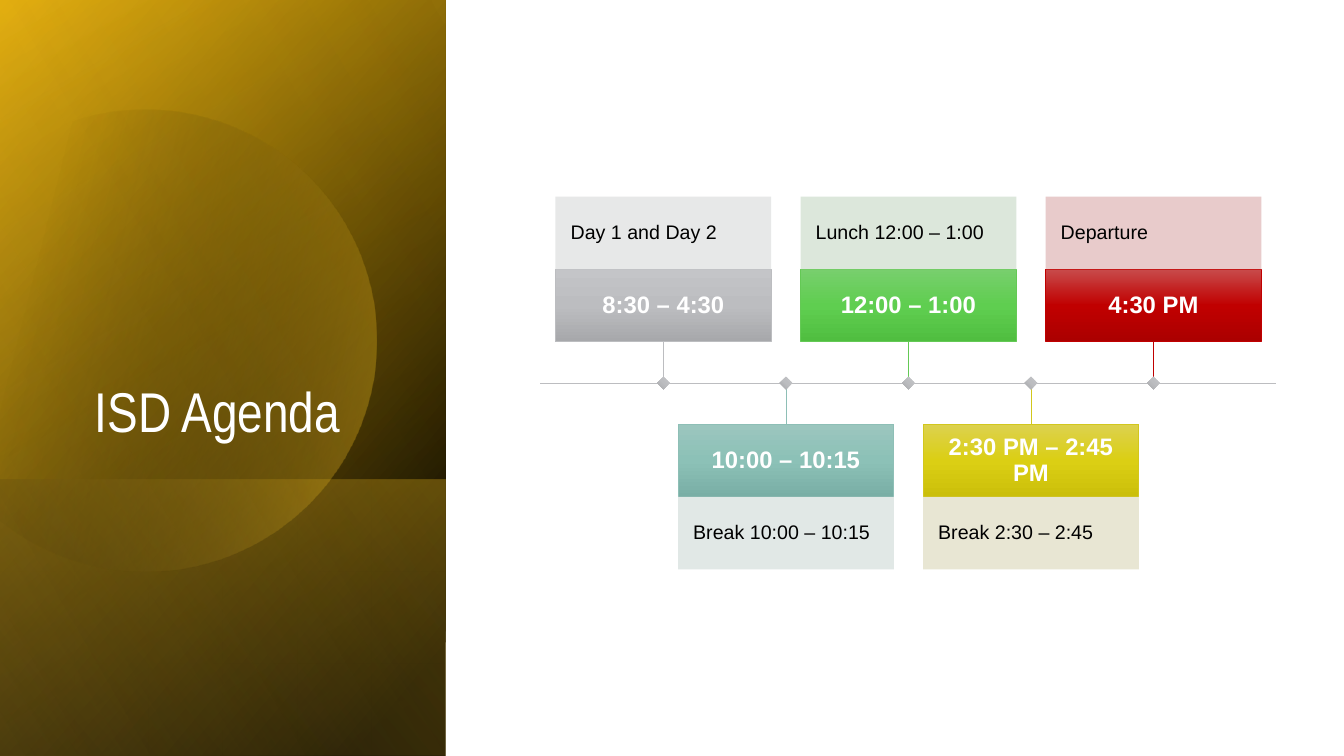
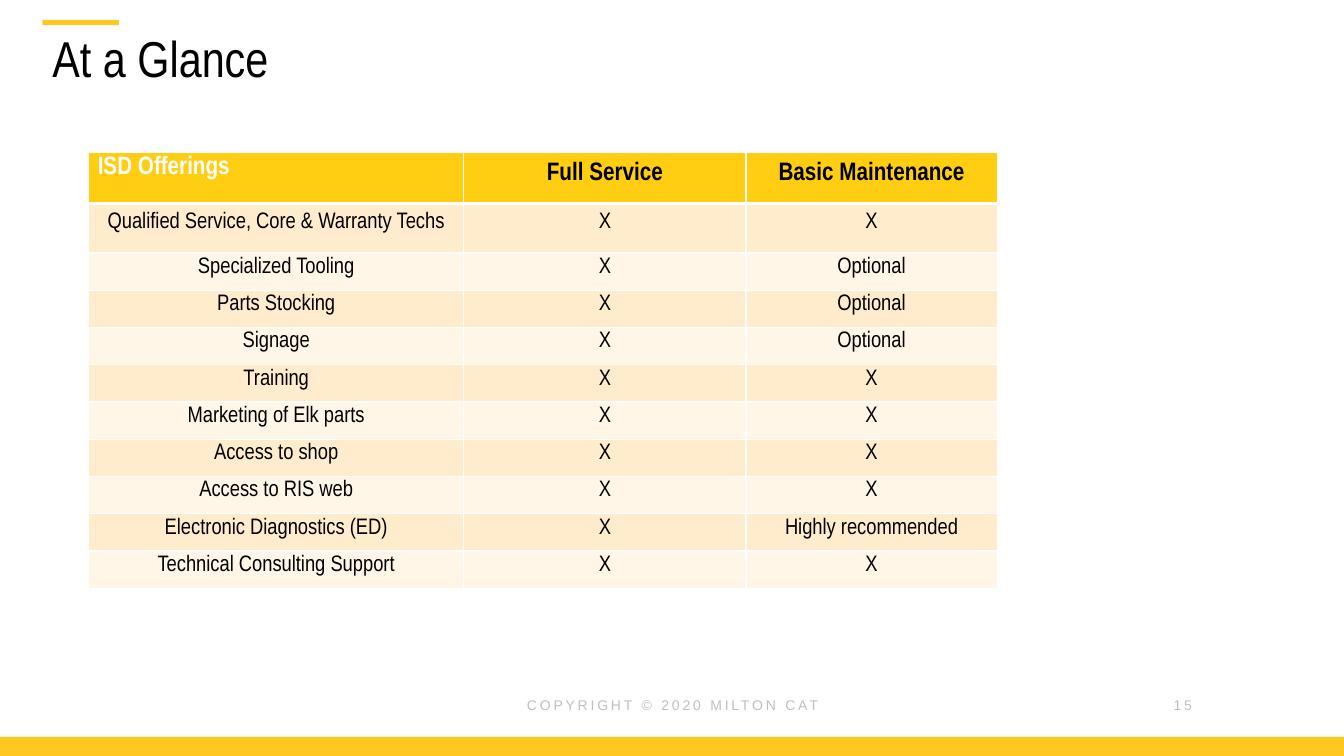
from dataclasses import dataclass
from math import acos, cos, sin

from lxml.etree import SubElement
from pptx import Presentation
from pptx.dml.color import RGBColor
from pptx.enum.shapes import MSO_CONNECTOR as Connector, MSO_SHAPE as Preset
from pptx.enum.text import MSO_ANCHOR as Anchor, MSO_AUTO_SIZE as AutoSize, PP_ALIGN as Align
from pptx.oxml import parse_xml
from pptx.oxml.ns import nsdecls, qn
from pptx.shapes.autoshape import Shape
from pptx.slide import Slide
from pptx.table import _Cell as Cell
from pptx.text.text import TextFrame
from pptx.util import Inches, Pt

WHITE = RGBColor(0xFF, 0xFF, 0xFF)
BLACK = RGBColor(0x00, 0x00, 0x00)
YELLOW = RGBColor(0xFE, 0xC8, 0x20)
AMBER = RGBColor(0xFF, 0xC7, 0x1F)
PALE_AMBER = RGBColor(0xFF, 0xDD, 0x79)
DARK_GOLD = RGBColor(0xD6, 0xA1, 0x00)
FOOTER_GRAY = RGBColor(0xBF, 0xBF, 0xBF)
AXIS_GRAY = RGBColor(0xBC, 0xBD, 0xC0)
HEADER_FILL = RGBColor(0xFF, 0xCD, 0x11)
ROW_FILLS = (RGBColor(0xFF, 0xEC, 0xCC), RGBColor(0xFF, 0xF6, 0xE7))

SLIDE_WIDTH, SLIDE_HEIGHT = 13.33, 7.5
PANEL_WIDTH = 4.42
BODY_FONT, HEADING_FONT = "Arial", "Arial Narrow"

AXIS_LEFT, AXIS_RIGHT, AXIS_Y = 5.36, 12.66, 3.8
CARD_LEFT, CARD_RIGHT = 5.51, 12.51
CARD_WIDTH, CARD_HEIGHT, STEM = 2.14, 0.72, 0.41
MARKER = 0.09

Box = tuple[float, float, float, float]


@dataclass(frozen=True)
class TextStyle:
    size: float
    color: RGBColor = BLACK
    font: str = BODY_FONT
    bold: bool = False
    align: Align = Align.LEFT
    anchor: Anchor = Anchor.MIDDLE
    margins: Box = (0.1, 0.05, 0.1, 0.05)
    line_spacing: float = 1.0
    tracking: int = 0


@dataclass(frozen=True)
class Stop:
    position: int
    color: RGBColor
    opacity: int = 100


@dataclass(frozen=True)
class GradientLayer:
    stops: tuple[Stop, ...]
    angle: int
    height: float = SLIDE_HEIGHT


@dataclass(frozen=True)
class Palette:
    light: RGBColor
    middle: RGBColor
    dark: RGBColor
    line: RGBColor
    label: RGBColor

    def stops(self) -> tuple[Stop, ...]:
        return Stop(0, self.light), Stop(50, self.middle), Stop(100, self.dark)


@dataclass(frozen=True)
class Session:
    time: str
    label: str
    palette: Palette


def palette(*codes: str) -> Palette:
    return Palette(*map(RGBColor.from_string, codes))


GRAY = palette("C4C5C8", "BCBDC0", "A7A8AB", "BCBDC0", "E7E8E8")
TEAL = palette("9BC6BE", "8CC1B7", "79AEA5", "8EBFB6", "E1E8E6")
GREEN = palette("78CF6D", "5FCE50", "50BE40", "64C955", "DCE7DB")
OLIVE = palette("DCD14E", "DBCF14", "CBBF0A", "D2C71D", "E8E6D3")
RED = palette("C84B4B", "C00000", "AB0000", "C00000", "E8CBCB")

SESSIONS = (
    Session("8:30 – 4:30", "Day 1 and Day 2", GRAY),
    Session("10:00 – 10:15", "Break 10:00 – 10:15", TEAL),
    Session("12:00 – 1:00", "Lunch 12:00 – 1:00", GREEN),
    Session("2:30 PM – 2:45 PM", "Break 2:30 – 2:45", OLIVE),
    Session("4:30 PM", "Departure", RED),
)
CARD_STEP = (CARD_RIGHT - CARD_LEFT - CARD_WIDTH) / (len(SESSIONS) - 1)

BASE_LAYERS = (
    GradientLayer((Stop(8, BLACK), Stop(100, DARK_GOLD)), 50),
    GradientLayer((Stop(0, BLACK, 0), Stop(99, AMBER, 46)), 30),
    GradientLayer((Stop(2, AMBER, 29), Stop(100, BLACK, 30)), 130, 2.74),
)
TOP_LAYER = GradientLayer((Stop(0, BLACK, 0), Stop(99, PALE_AMBER, 11)), 120)
DISC_STOPS = (Stop(15, BLACK, 0), Stop(100, AMBER, 43))

AGENDA_TITLE = TextStyle(40, WHITE, HEADING_FONT, align=Align.RIGHT, anchor=Anchor.BOTTOM,
                         margins=(0.1, 0.05, 0.68, 0.05), line_spacing=0.9)
TABLE_TITLE = TextStyle(36, font=HEADING_FONT, anchor=Anchor.TOP, line_spacing=0.9)
TIME_STYLE = TextStyle(17, WHITE, bold=True, align=Align.CENTER,
                       margins=(0.09,) * 4, line_spacing=0.9)
LABEL_STYLE = TextStyle(14, margins=(0.15,) * 4, line_spacing=0.9)
COPYRIGHT_STYLE = TextStyle(10, FOOTER_GRAY, align=Align.CENTER, tracking=200)
NUMBER_STYLE = TextStyle(10, FOOTER_GRAY, align=Align.RIGHT, tracking=200)

OFFERINGS = (
    ("ISD Offerings", "Full Service", "Basic Maintenance"),
    ("Qualified Service, Core & Warranty Techs", "X", "X"),
    ("Specialized Tooling", "X", "Optional"),
    ("Parts Stocking", "X", "Optional"),
    ("Signage", "X", "Optional"),
    ("Training", "X", "X"),
    ("Marketing of Elk parts", "X", "X"),
    ("Access to shop", "X", "X"),
    ("Access to RIS web", "X", "X"),
    ("Electronic Diagnostics (ED)", "X", "Highly recommended"),
    ("Technical Consulting Support", "X", "X"),
)
COLUMN_WIDTHS = (3.72, 2.8, 2.49)
ROW_HEIGHTS = (0.51, 0.49) + (0.37,) * 9


def emu(box: tuple[float, ...]) -> list[int]:
    return [Inches(length) for length in box]


def format_text(frame: TextFrame, style: TextStyle) -> None:
    for paragraph in frame.paragraphs:
        paragraph.alignment = style.align
        paragraph.line_spacing = style.line_spacing
        for run in paragraph.runs:
            run.font.size = Pt(style.size)
            run.font.name = style.font
            run.font.bold = style.bold
            run.font.color.rgb = style.color
            if style.tracking:
                run._r.get_or_add_rPr().set("spc", str(style.tracking))


def write(frame: TextFrame, text: str, style: TextStyle) -> None:
    frame.text = text
    frame.word_wrap = True
    frame.auto_size = AutoSize.NONE
    frame.vertical_anchor = style.anchor
    (frame.margin_left, frame.margin_top,
     frame.margin_right, frame.margin_bottom) = emu(style.margins)
    format_text(frame, style)


def add_block(slide: Slide, box: Box, color: RGBColor | None = None) -> Shape:
    shape = slide.shapes.add_shape(Preset.RECTANGLE, *emu(box))
    shape.shadow.inherit = False
    shape.line.fill.background()
    if color is not None:
        shape.fill.solid()
        shape.fill.fore_color.rgb = color
    return shape


def set_gradient(shape: Shape, stops: tuple[Stop, ...], angle: int) -> None:
    shape.fill.background()
    properties = shape.element.spPr
    gradient = parse_xml(f'<a:gradFill {nsdecls("a")} rotWithShape="1"><a:gsLst/>'
                         f'<a:lin ang="{angle * 60000}" scaled="0"/></a:gradFill>')
    for stop in stops:
        entry = SubElement(gradient[0], qn("a:gs"), pos=str(stop.position * 1000))
        color = SubElement(entry, qn("a:srgbClr"), val=str(stop.color))
        if stop.opacity < 100:
            SubElement(color, qn("a:alpha"), val=str(stop.opacity * 1000))
    properties.replace(properties.find(qn("a:noFill")), gradient)


def add_line(slide: Slide, start: tuple[float, float], end: tuple[float, float],
             color: RGBColor) -> None:
    line = slide.shapes.add_connector(Connector.STRAIGHT, *emu(start + end))
    line.line.color.rgb = color
    line.line.width = Pt(0.5)
    SubElement(line.element.spPr, qn("a:effectLst"))


def add_title(slide: Slide, text: str, box: Box, style: TextStyle) -> None:
    title = slide.shapes.title
    title.left, title.top, title.width, title.height = emu(box)
    write(title.text_frame, text, style)
    title.element.getparent().append(title.element)


def add_panel_layer(slide: Slide, layer: GradientLayer) -> None:
    left = (PANEL_WIDTH - layer.height) / 2
    top = SLIDE_HEIGHT - (layer.height + PANEL_WIDTH) / 2
    shape = add_block(slide, (left, top, layer.height, PANEL_WIDTH))
    set_gradient(shape, layer.stops, layer.angle)
    shape.rotation = 90
    shape.element.spPr.find(qn("a:xfrm")).set("flipH", "1")


def add_disc(slide: Slide) -> None:
    center_x, center_y, radius, steps = 1.44, 3.38, 2.29, 120
    limit = acos(-center_x / radius)
    angles = [limit * (2 * step / steps - 1) for step in range(steps + 1)]
    points = [(Inches(center_x + radius * cos(angle)), Inches(center_y + radius * sin(angle)))
              for angle in angles]
    builder = slide.shapes.build_freeform(*points[0])
    builder.add_line_segments(points[1:], close=True)
    disc = builder.convert_to_shape()
    disc.shadow.inherit = False
    disc.line.fill.background()
    set_gradient(disc, DISC_STOPS, 14)


def add_session(slide: Slide, index: int, session: Session) -> None:
    above = index % 2 == 0
    direction = -1 if above else 1
    left = CARD_LEFT + index * CARD_STEP
    center = left + CARD_WIDTH / 2
    stem_end = AXIS_Y + direction * STEM
    time_top = stem_end - CARD_HEIGHT if above else stem_end
    colors = session.palette

    time = add_block(slide, (left, time_top, CARD_WIDTH, CARD_HEIGHT))
    set_gradient(time, colors.stops(), 90)
    time.line.color.rgb = colors.line
    time.line.width = Pt(0.5)
    write(time.text_frame, session.time, TIME_STYLE)

    label_top = time_top + direction * CARD_HEIGHT
    label = add_block(slide, (left, label_top, CARD_WIDTH, CARD_HEIGHT), colors.label)
    write(label.text_frame, session.label, LABEL_STYLE)

    add_line(slide, (center, AXIS_Y), (center, stem_end), colors.line)
    marker = add_block(slide, (center - MARKER / 2, AXIS_Y - MARKER / 2, MARKER, MARKER))
    set_gradient(marker, GRAY.stops(), 90)
    marker.rotation = 45


def set_borders(cell: Cell, top: int, bottom: int) -> None:
    properties = cell._tc.get_or_add_tcPr()
    for position, (side, width) in enumerate(zip("LRTB", (1, 1, top, bottom))):
        properties.insert(position, parse_xml(
            f'<a:ln{side} {nsdecls("a")} w="{Pt(width)}"><a:solidFill>'
            f'<a:srgbClr val="{WHITE}"/></a:solidFill></a:ln{side}>'))


def fill_cell(cell: Cell, text: str, row: int, column: int) -> None:
    header = row == 0
    corner = header and column == 0
    top = 0.04 if corner or row > 1 else (0.1, 0.09)[row]
    style = TextStyle(18 if header else 16, WHITE if corner else BLACK, HEADING_FONT, header,
                      Align.LEFT if corner else Align.CENTER)
    cell.text_frame.text = text
    cell.margin_left, cell.margin_top, cell.margin_right, cell.margin_bottom = emu(
        (0.09 if corner else 0, top, 0, 0))
    cell.vertical_anchor = Anchor.TOP
    format_text(cell.text_frame, style)
    cell.fill.solid()
    cell.fill.fore_color.rgb = HEADER_FILL if header else ROW_FILLS[(row - 1) % 2]
    set_borders(cell, 3 if row == 1 else 1, 3 if header else 1)


def build_agenda(slide: Slide) -> None:
    for layer in BASE_LAYERS:
        add_panel_layer(slide, layer)
    add_disc(slide)
    add_panel_layer(slide, TOP_LAYER)
    add_title(slide, "ISD Agenda", (0.64, 1.84, 3.41, 2.62), AGENDA_TITLE)
    add_line(slide, (AXIS_LEFT, AXIS_Y), (AXIS_RIGHT, AXIS_Y), AXIS_GRAY)
    for index, session in enumerate(SESSIONS):
        add_session(slide, index, session)


def build_offerings(slide: Slide) -> None:
    add_block(slide, (0, 7.31, SLIDE_WIDTH, 0.19), YELLOW)
    add_block(slide, (0.42, 0.2, 0.76, 0.05), YELLOW)
    for text, left, width, style in (("COPYRIGHT © 2020 MILTON CAT", 3.9, 5.54, COPYRIGHT_STYLE),
                                     ("15", 11.11, 0.81, NUMBER_STYLE)):
        footer = slide.shapes.add_textbox(*emu((left, 6.86, width, 0.27)))
        write(footer.text_frame, text, style)
    add_title(slide, "At a Glance", (0.42, 0.29, 12.44, 1.22), TABLE_TITLE)
    box = (0.88, 1.51, sum(COLUMN_WIDTHS), sum(ROW_HEIGHTS))
    table = slide.shapes.add_table(len(ROW_HEIGHTS), len(COLUMN_WIDTHS), *emu(box)).table
    for column, width in zip(table.columns, COLUMN_WIDTHS):
        column.width = Inches(width)
    for row, (height, texts) in enumerate(zip(ROW_HEIGHTS, OFFERINGS)):
        table.rows[row].height = Inches(height)
        for column, text in enumerate(texts):
            fill_cell(table.cell(row, column), text, row, column)


def main() -> None:
    presentation = Presentation()
    presentation.slide_width, presentation.slide_height = emu((SLIDE_WIDTH, SLIDE_HEIGHT))
    title_only = presentation.slide_layouts[5]
    for build in (build_agenda, build_offerings):
        build(presentation.slides.add_slide(title_only))
    presentation.save("out.pptx")


if __name__ == "__main__":
    main()
